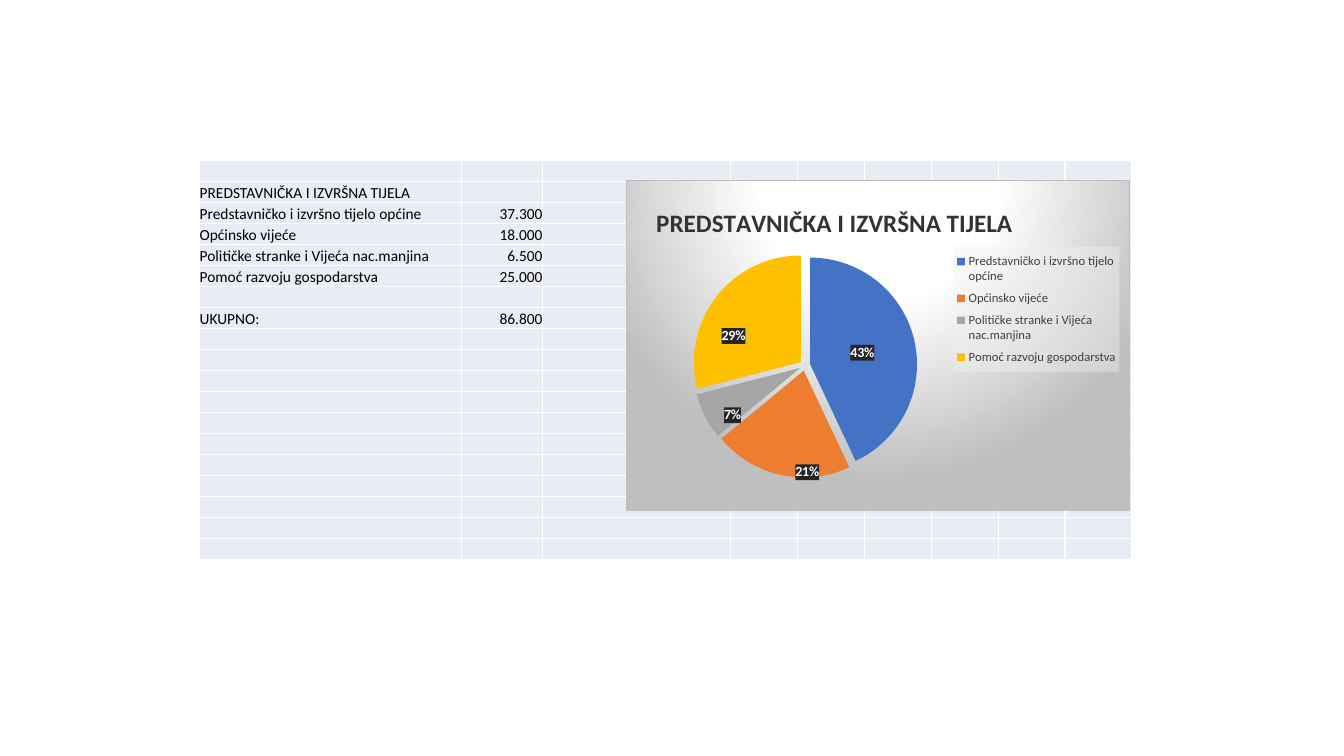
from copy import deepcopy
from lxml import etree
from pptx import Presentation, util as u
from pptx.chart import data
from pptx.dml import color
from pptx.enum import chart as ce, text
from pptx.oxml import ns

FONT = "Calibri"
HEAD = "PREDSTAVNIČKA I IZVRŠNA TIJELA"
ITEMS = [
    ("Predstavničko i izvršno tijelo općine", "37.300", 43, "4472C4"),
    ("Općinsko vijeće", "18.000", 21, "ED7D31"),
    ("Političke stranke i Vijeća nac.manjina", "6.500", 7, "A5A5A5"),
    ("Pomoć razvoju gospodarstva", "25.000", 29, "FFC000"),
]
ROWS = [("", ""), (HEAD, "")] + [item[:2] for item in ITEMS]
ROWS += [("", ""), ("UKUPNO:", "86.800")]
COLS = [187, 58, 134.2] + [47.8] * 6
COUNT = 19
SHIFTS = {1: (0.03, 0.15), 2: (-0.04, 0.07), 3: (-0.05, 0.02)}


def rgb(code):
    return color.RGBColor.from_string(code)


def xml(body):
    uses = " ".join(f'xmlns:{p}="{ns.nsuri(p)}"' for p in ("a", "c"))
    return etree.fromstring(f"<c:box {uses}>{body}</c:box>")[0]


def style(font, size, code, bold=False):
    font.name, font.size, font.bold = FONT, u.Pt(size), bold
    font.color.rgb = rgb(code)


def layout(left, top, width=None, height=None, inner=False):
    body = '<c:layoutTarget val="inner"/>' if inner else ""
    body += '<c:xMode val="edge"/><c:yMode val="edge"/>'
    sizes = zip("xywh", (left, top, width, height))
    body += "".join(f'<c:{k} val="{v}"/>' for k, v in sizes if v is not None)
    return xml(f"<c:layout><c:manualLayout>{body}</c:manualLayout></c:layout>")


def place(part, box):
    for old in part.findall(ns.qn("c:layout")):
        part.remove(old)
    spot = part.find(ns.qn("c:overlay"))
    if spot is None:
        part.insert(0, box)
    else:
        spot.addprevious(box)


def tint(code, alpha):
    return xml(f'<c:spPr><a:solidFill><a:srgbClr val="{code}">'
               f'<a:alpha val="{alpha * 1000}"/></a:srgbClr></a:solidFill></c:spPr>')


def fill_cell(cell, words, right):
    cell.margin_left = cell.margin_right = cell.margin_top = cell.margin_bottom = 0
    cell.vertical_anchor = text.MSO_ANCHOR.BOTTOM
    cell.fill.solid()
    cell.fill.fore_color.rgb = rgb("E9EBF5")
    props = cell._tc.get_or_add_tcPr()
    for spot, side in enumerate("LRTB"):
        props.insert(spot, xml(f'<a:ln{side} w="12700"><a:solidFill>'
                               f'<a:srgbClr val="FFFFFF"/></a:solidFill></a:ln{side}>'))
    para = cell.text_frame.paragraphs[0]
    if words:
        run = para.add_run()
        run.text = words
        style(run.font, 11, "000000")
        if right:
            para.alignment = text.PP_ALIGN.RIGHT
    else:
        para._p.get_or_add_endParaRPr().set("sz", "1100")


def add_sheet(slide, left, top, width, height):
    grid = slide.shapes.add_table(COUNT, len(COLS), u.Pt(left), u.Pt(top),
                                  u.Pt(width), u.Pt(height)).table
    grid.first_row = grid.horz_banding = False
    for col, size in zip(grid.columns, COLS):
        col.width = u.Pt(size)
    for y, row in enumerate(grid.rows):
        row.height = u.Pt(height / COUNT)
        words = ROWS[y] if y < len(ROWS) else ()
        for x, cell in enumerate(row.cells):
            fill_cell(cell, words[x] if x < len(words) else "", x == 1)


def add_labels(ser):
    labels = ser.data_labels
    style(labels.font, 10, "FFFFFF", True)
    labels.number_format, labels.number_format_is_linked = "0%", False
    labels.position = ce.XL_LABEL_POSITION.CENTER
    labels.show_percentage, labels.show_value = True, False
    root = labels._element
    root.find(ns.qn("c:txPr")).addprevious(tint("262626", 75))
    parts = [p for p in root if p.tag != ns.qn("c:showLeaderLines")]
    for spot, (key, (x, y)) in enumerate(SHIFTS.items()):
        label = xml(f'<c:dLbl><c:idx val="{key}"/><c:layout><c:manualLayout>'
                    f'<c:x val="{x}"/><c:y val="{y}"/>'
                    '</c:manualLayout></c:layout></c:dLbl>')
        label.extend(deepcopy(parts))
        root.insert(spot, label)


def add_pie(slide, left, top, width, height):
    info = data.CategoryChartData()
    info.categories = [item[0] for item in ITEMS]
    info.add_series("Series 1", [item[2] for item in ITEMS])
    pie = slide.shapes.add_chart(ce.XL_CHART_TYPE.PIE, u.Pt(left), u.Pt(top),
                                 u.Pt(width), u.Pt(height), info).chart
    style(pie.font, 10, "000000")
    stops = "".join(f'<a:gs pos="{pos}000"><a:srgbClr val="{code}"/></a:gs>'
                    for pos, code in ((0, "FFFFFF"), (39, "FFFFFF"), (100, "BFBFBF")))
    pie._chartSpace.chart.addnext(xml(
        f'<c:spPr><a:gradFill><a:gsLst>{stops}</a:gsLst><a:path path="circle">'
        '<a:fillToRect l="50000" t="-80000" r="50000" b="180000"/></a:path></a:gradFill>'
        '<a:ln w="9525"><a:solidFill><a:srgbClr val="BFBFBF"/></a:solidFill></a:ln></c:spPr>'))

    title = pie.chart_title
    run = title.text_frame.paragraphs[0].add_run()
    run.text = HEAD
    style(run.font, 18, "333333", True)
    title.include_in_layout = False
    place(title._element, layout(0.05, 0.06))

    pie.has_legend = True
    key = pie.legend
    key.position = ce.XL_LEGEND_POSITION.RIGHT
    key.include_in_layout = False
    style(key.font, 9, "404040")
    place(key._element, layout(0.65, 0.2, 0.33, 0.38))
    key._element.find(ns.qn("c:txPr")).addprevious(tint("F2F2F2", 39))

    plot = pie.plots[0]
    plot.vary_by_categories = True
    place(pie._chartSpace.chart.plotArea, layout(0.13, 0.22, 0.45, 0.68, True))
    ser = plot.series[0]
    for spot, item in enumerate(ITEMS):
        form = ser.points[spot].format
        form.fill.solid()
        form.fill.fore_color.rgb = rgb(item[3])
        form.line.fill.background()
    ser._element.find(ns.qn("c:dPt")).addprevious(xml('<c:explosion val="5"/>'))
    add_labels(ser)


def main():
    deck = Presentation()
    deck.slide_width, deck.slide_height = u.Pt(960), u.Pt(540)
    slide = deck.slides.add_slide(deck.slide_layouts[6])
    add_sheet(slide, 142.6, 114.6, sum(COLS), 285)
    add_pie(slide, 447.1, 128.9, 360, 236.2)
    deck.save("out.pptx")


if __name__ == "__main__":
    main()
